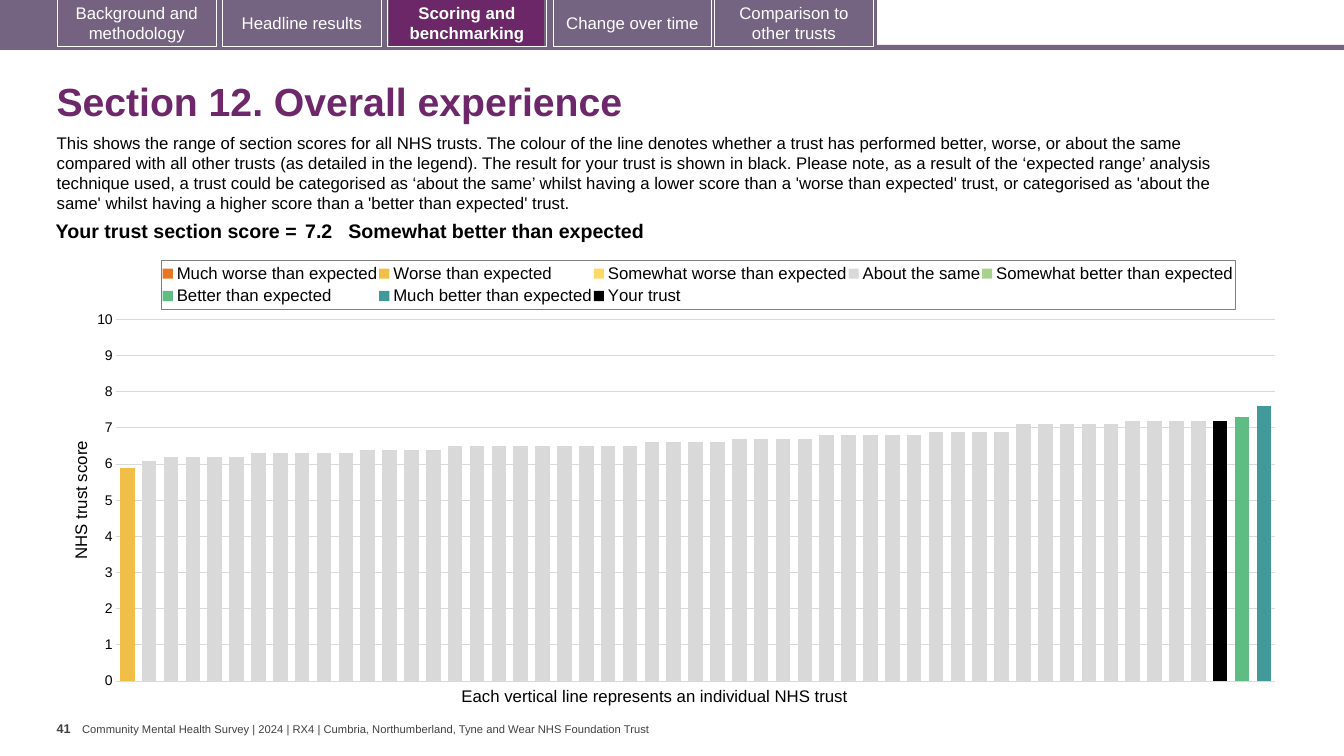
from copy import deepcopy
from lxml.etree import SubElement
from pptx import Presentation
from pptx.chart.data import CategoryChartData
from pptx.dml.color import RGBColor
from pptx.enum.chart import XL_CHART_TYPE as ChartType, XL_LEGEND_POSITION as LegendPosition
from pptx.enum.chart import XL_TICK_MARK as TickMark
from pptx.enum.shapes import MSO_SHAPE as Shape
from pptx.enum.text import MSO_ANCHOR as Anchor, MSO_AUTO_SIZE as AutoSize, PP_ALIGN as Align
from pptx.oxml import parse_xml
from pptx.oxml.ns import nsdecls, qn
from pptx.util import Cm, Pt

COLOURS = {
    "band": "756382", "tab": "746280", "active": "6B2768", "title": "6D276A",
    "white": "FFFFFF", "black": "000000", "footer": "404040",
    "grid": "D9D9D9", "legend_border": "7F7F7F",
    "much_worse": "E87722", "worse": "F1BE48", "somewhat_worse": "FFD966",
    "same": "D9D9D9", "somewhat_better": "A9D18E", "better": "5FBD83",
    "much_better": "419999",
}
TABS = [
    ("Background and methodology", 1.45, "tab"),
    ("Headline results", 5.61, None),
    ("Scoring and benchmarking", 9.77, None),
    ("Change over time", 13.94, "band"),
    ("Comparison to other trusts", 18.01, "band"),
]
ACTIVE_TAB = "Scoring and benchmarking"
TRUST_COUNT = 53
SAME_COUNTS = {6.1: 1, 6.2: 4, 6.3: 5, 6.4: 4, 6.5: 9, 6.6: 4, 6.7: 4,
               6.8: 5, 6.9: 4, 7.1: 5, 7.2: 4}
SAME_SCORES = [score for score, count in SAME_COUNTS.items() for _ in range(count)]
BANDS = [
    ("Much worse than expected", "much_worse", 0, []),
    ("Worse than expected", "worse", 0, [5.9]),
    ("Somewhat worse than expected", "somewhat_worse", 0, []),
    ("About the same", "same", 1, SAME_SCORES),
    ("Somewhat better than expected", "somewhat_better", 50, [7.2]),
    ("Better than expected", "better", 51, [7.3]),
    ("Much better than expected", "much_better", 52, [7.6]),
    ("Your trust", "black", 50, [7.2]),
]
EXPLANATION = (
    "This shows the range of section scores for all NHS trusts. The colour of the line denotes "
    "whether a trust has performed better, worse, or about the same compared with all other trusts "
    "(as detailed in the legend). The result for your trust is shown in black. Please note, as a "
    "result of the ‘expected range’ analysis technique used, a trust could be categorised as ‘about "
    "the same’ whilst having a lower score than a 'worse than expected' trust, or categorised as "
    "'about the same' whilst having a higher score than a 'better than expected' trust."
)


def rgb(name):
    """Return the named colour."""
    return RGBColor.from_string(COLOURS[name])


def add_run(paragraph, text, size, colour="black", bold=False):
    """Append one formatted run."""
    run = paragraph.add_run()
    run.text = text
    style_font(run.font, size, colour, bold)


def style_font(font, size, colour="black", bold=False):
    """Set face, size, colour and weight of a font."""
    font.name, font.size, font.bold = "Arial", Pt(size), bold
    font.color.rgb = rgb(colour)


def set_margins(holder, across, down):
    """Set the inner margins of a text frame or cell in centimetres."""
    holder.margin_left = holder.margin_right = Cm(across)
    holder.margin_top = holder.margin_bottom = Cm(down)


def add_bar(slide, box, fill, outline=None):
    """Add a flat rectangle in the given box."""
    bar = slide.shapes.add_shape(Shape.RECTANGLE, *map(Cm, box))
    bar.shadow.inherit = False
    if fill:
        bar.fill.solid()
        bar.fill.fore_color.rgb = rgb(fill)
    else:
        bar.fill.background()
    if outline:
        bar.line.color.rgb = rgb(outline)
        bar.line.width = Pt(0.75)
    else:
        bar.line.fill.background()
    return bar


def add_text(slide, box, text, size, colour="black", bold=False, wrap=False, margins=(0.25, 0.13)):
    """Add a text box with one run and return its frame."""
    frame = slide.shapes.add_textbox(*map(Cm, box)).text_frame
    frame.word_wrap = wrap
    set_margins(frame, *margins)
    add_run(frame.paragraphs[0], text, size, colour, bold)
    return frame


def add_navigation(slide, box):
    """Draw the band of section tabs across the top."""
    left, top, width, height = box
    add_bar(slide, (left, top + 1.13, width, 0.13), "band")
    add_bar(slide, (left, top, 22.1, height), "band")
    for plate_left, fill in ((1.5, "tab"), (9.8, "active")):
        add_bar(slide, (left + plate_left, top, 3.91, 1.17), fill)
    for label, offset, fill in TABS:
        tab = add_bar(slide, (left + offset, top - 0.02, 4, height), fill, "white")
        frame = tab.text_frame
        frame.word_wrap = True
        frame.vertical_anchor = Anchor.MIDDLE
        frame.paragraphs[0].alignment = Align.CENTER
        add_run(frame.paragraphs[0], label, 12, "white", label == ACTIVE_TAB)


def add_heading(slide, box):
    """Place the title and the explanation under it."""
    left, top, width, height = box
    title = slide.shapes.title
    title.left, title.top, title.width, title.height = map(Cm, (left, top, width, 1.83))
    frame = title.text_frame
    frame.auto_size = AutoSize.NONE
    frame.vertical_anchor = Anchor.MIDDLE
    heading = frame.paragraphs[0]
    heading.alignment = Align.LEFT
    heading.line_spacing = 0.9
    add_run(heading, "Section 12. Overall experience", 28, "title", True)
    add_text(slide, (left + 0.01, top + 1.51, 30.81, height - 1.51), EXPLANATION, 12, wrap=True)


def add_score(slide, box):
    """Place the one-row table with the trust's score."""
    table = slide.shapes.add_table(1, 3, *map(Cm, box)).table
    table.first_row = table.horz_banding = False
    columns = [
        ("Your trust section score =", 6.68, 0.1, Align.RIGHT),
        ("7.2", 1.19, 0.1, Align.LEFT),
        ("Somewhat better than expected", 21.82, 0, Align.LEFT),
    ]
    for index, (text, width, margin, alignment) in enumerate(columns):
        table.columns[index].width = Cm(width)
        cell = table.cell(0, index)
        cell.fill.background()
        set_margins(cell, margin, 0.1)
        paragraph = cell.text_frame.paragraphs[0]
        paragraph.alignment = alignment
        add_run(paragraph, text, 14, bold=True)


def insert_layout(parent, index, percents, inner=False):
    """Fix the place of a chart part in percent of the chart."""
    for old in parent.findall(qn("c:layout")):
        parent.remove(old)
    layout = parse_xml(f"<c:layout {nsdecls('c')}><c:manualLayout/></c:layout>")
    manual = layout[0]
    if inner:
        SubElement(manual, qn("c:layoutTarget")).set("val", "inner")
    for tag in ("xMode", "yMode"):
        SubElement(manual, qn(f"c:{tag}")).set("val", "edge")
    for tag, percent in zip("xywh", percents):
        SubElement(manual, qn(f"c:{tag}")).set("val", str(percent / 100))
    parent.insert(index, layout)


def add_legend(chart):
    """Show the framed legend above the columns."""
    chart.has_legend = True
    legend = chart.legend
    legend.position = LegendPosition.TOP
    legend.include_in_layout = False
    style_font(legend.font, 12)
    element = legend._element
    insert_layout(element, 1, (7.65, 2.55, 87.7, 11))
    element.find(qn("c:overlay")).addnext(parse_xml(
        f"<c:spPr {nsdecls('c', 'a')}><a:ln w='9525'><a:solidFill>"
        f"<a:srgbClr val='{COLOURS['legend_border']}'/></a:solidFill></a:ln></c:spPr>"))


def move_trust_to_right_axis(plot_area):
    """Put the last series on a second, unlabelled value axis."""
    bars, category, value = (plot_area.find(qn(f"c:{tag}")) for tag in ("barChart", "catAx", "valAx"))
    trust_bars, right_value, hidden_category = map(deepcopy, (bars, value, category))
    bars.remove(bars.findall(qn("c:ser"))[-1])
    for series in trust_bars.findall(qn("c:ser"))[:-1]:
        trust_bars.remove(series)
    for tag in ("majorGridlines", "title"):
        right_value.remove(right_value.find(qn(f"c:{tag}")))
    for tag, setting in (("axPos", "r"), ("majorTickMark", "out"),
                         ("tickLblPos", "none"), ("crosses", "max")):
        right_value.find(qn(f"c:{tag}")).set("val", setting)
    ids = ("50010", "50020")
    for axis, own, crossed in ((hidden_category, *ids), (right_value, *ids[::-1])):
        axis.find(qn("c:axId")).set("val", own)
        axis.find(qn("c:crossAx")).set("val", crossed)
    for reference, axis_id in zip(trust_bars.findall(qn("c:axId")), ids):
        reference.set("val", axis_id)
    bars.addnext(trust_bars)
    value.addnext(right_value)
    right_value.addnext(hidden_category)


def add_score_chart(slide, box):
    """Chart the section score of every trust, with its caption below."""
    left, top, width, height = box
    data = CategoryChartData(number_format="0.0")
    data.categories = [str(trust) for trust in range(1, TRUST_COUNT + 1)]
    for name, _, start, scores in BANDS:
        after = TRUST_COUNT - start - len(scores)
        data.add_series(name, [None] * start + scores + [None] * after)
    chart = slide.shapes.add_chart(ChartType.COLUMN_CLUSTERED, *map(Cm, box), data).chart
    chart.has_title = False
    style_font(chart.font, 10)
    plot = chart.plots[0]
    plot.gap_width, plot.overlap, plot.vary_by_categories = 50, 100, False
    for series, (_, colour, _, _) in zip(plot.series, BANDS):
        series.format.fill.solid()
        series.format.fill.fore_color.rgb = rgb(colour)
        series.invert_if_negative = False
    chart.category_axis.visible = False
    axis = chart.value_axis
    axis.minimum_scale, axis.maximum_scale, axis.major_unit = 0, 10, 1
    axis.major_tick_mark = TickMark.NONE
    axis.format.line.fill.background()
    axis.major_gridlines.format.line.color.rgb = rgb("grid")
    axis.major_gridlines.format.line.width = Pt(0.75)
    axis.tick_labels.number_format = "0"
    axis.tick_labels.number_format_is_linked = False
    style_font(axis.tick_labels.font, 10)
    add_run(axis.axis_title.text_frame.paragraphs[0], "NHS trust score", 12)
    plot_area = chart._chartSpace.chart.plotArea
    insert_layout(plot_area, 0, (4, 15.8, 94.6, 80.8), inner=True)
    move_trust_to_right_axis(plot_area)
    add_legend(chart)
    add_text(slide, (left + 9.68, top + height - 0.4, 10.44, 0.76),
             "Each vertical line represents an individual NHS trust", 12)


def add_footer(slide, box):
    """Place the page number and the survey name."""
    left, top, _, height = box
    add_text(slide, (left, top, 0.64, height), "41", 9, "footer", True, margins=(0, 0.13))
    survey = add_text(
        slide, (left + 0.64, top + 0.16, 14.5, 0.33),
        "Community Mental Health Survey | 2024 | RX4 | Cumbria, Northumberland, "
        "Tyne and Wear NHS Foundation Trust", 8, "footer", margins=(0, 0))
    survey.vertical_anchor = Anchor.MIDDLE


def main():
    """Build the slide and save it."""
    deck = Presentation()
    deck.slide_width, deck.slide_height = Cm(33.87), Cm(19.05)
    slide = deck.slides.add_slide(deck.slide_layouts[5])
    add_navigation(slide, (0, 0, 33.87, 1.2))
    add_heading(slide, (1.17, 1.7, 31.72, 3.84))
    add_score_chart(slide, (1.7, 6.27, 30.86, 11.28))
    add_score(slide, (0.91, 5.46, 29.69, 0.79))
    add_footer(slide, (1.43, 18.04, 15.14, 1.02))
    deck.save("out.pptx")


if __name__ == "__main__":
    main()
